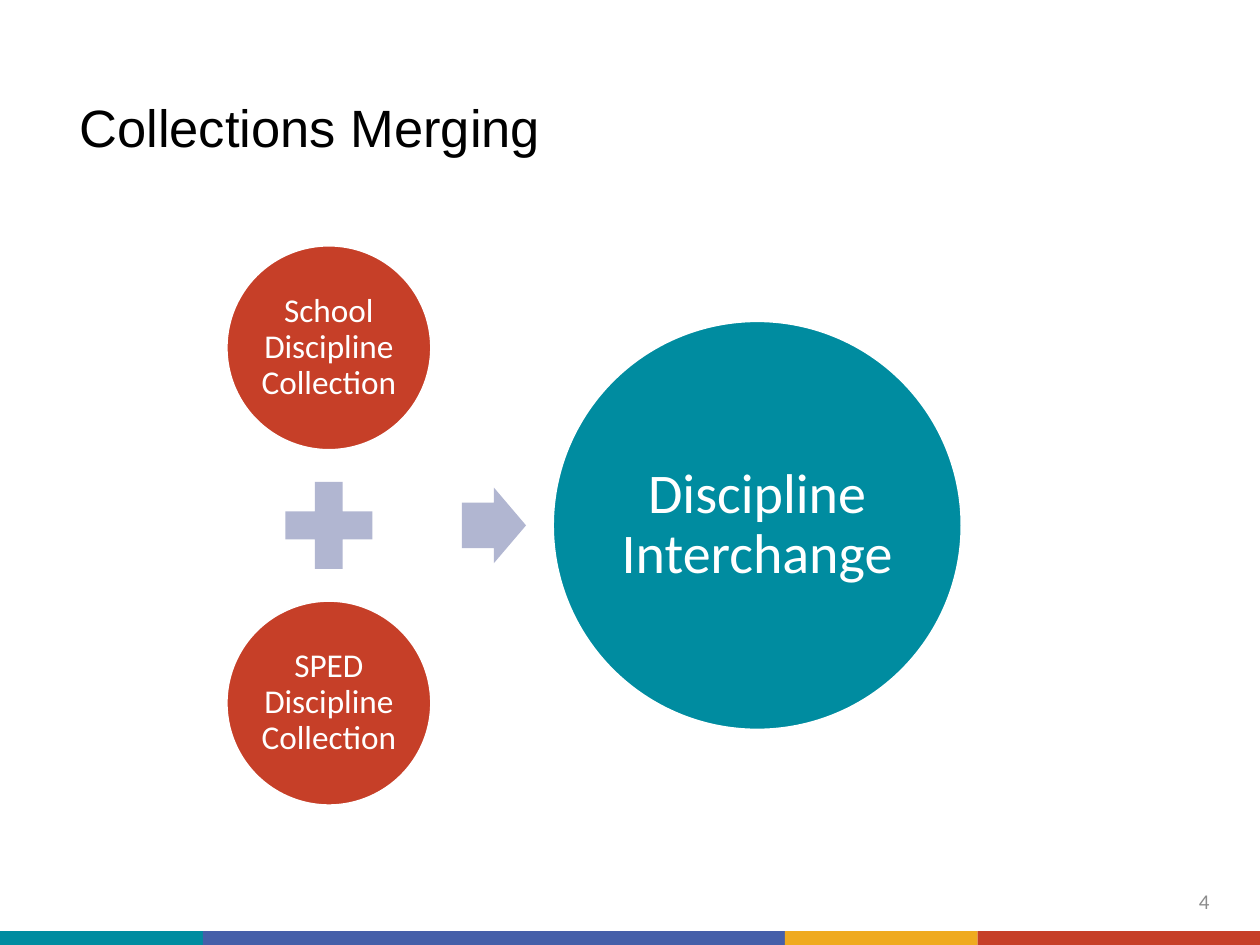
from pptx import Presentation
from pptx.dml.color import RGBColor
from pptx.enum.shapes import MSO_SHAPE
from pptx.enum.text import MSO_ANCHOR, PP_ALIGN
from pptx.util import Inches, Pt

WIDTH, HEIGHT = 10, 7.5
RED, TEAL, LAVENDER, WHITE = "C63F28", "008CA0", "B1B6D1", "FFFFFF"

TITLE = "Collections Merging"
SOURCES = ["School Discipline Collection", "SPED Discipline Collection"]
RESULT = "Discipline Interchange"
PAGE_NUMBER = "4"
FOOTER_BANDS = [(TEAL, 1.61), ("455FA9", 4.62), ("EFAA1F", 1.53), (RED, 2.24)]

BAND_HEIGHT = 0.11
MIDDLE = 4.17
SOURCE_CENTER, SOURCE_SIZE, SOURCE_OFFSET = 2.61, 1.62, 1.41
PLUS_SIZE = 0.94
ARROW_CENTER, ARROW_WIDTH, ARROW_HEIGHT = 3.92, 0.51, 0.6
RESULT_CENTER, RESULT_SIZE = 6.01, 2 * SOURCE_SIZE


def color(value):
    return RGBColor.from_string(value)


def write(shape, text, size, font, text_color, align, anchor, inset, spacing=0.9):
    frame = shape.text_frame
    frame.text = text
    frame.word_wrap = True
    frame.vertical_anchor = anchor
    frame.margin_left = frame.margin_right = Inches(inset)
    frame.margin_top = frame.margin_bottom = Inches(inset)
    paragraph = frame.paragraphs[0]
    paragraph.alignment = align
    paragraph.line_spacing = spacing
    run_font = paragraph.runs[0].font
    run_font.name, run_font.size = font, Pt(size)
    run_font.color.rgb = color(text_color)


def add_shape(slide, kind, left, top, width, height, fill):
    shape = slide.shapes.add_shape(kind, *map(Inches, (left, top, width, height)))
    shape.shadow.inherit = False
    shape.fill.solid()
    shape.fill.fore_color.rgb = color(fill)
    shape.line.fill.background()
    return shape


def add_centered(slide, kind, center_x, center_y, width, height, fill):
    return add_shape(slide, kind, center_x - width / 2, center_y - height / 2,
                     width, height, fill)


def add_circle(slide, center_x, center_y, diameter, fill, text, size, inset):
    circle = add_centered(slide, MSO_SHAPE.OVAL, center_x, center_y, diameter, diameter, fill)
    circle.line.color.rgb = color(WHITE)
    circle.line.width = Pt(1)
    write(circle, text, size, "Calibri", WHITE, PP_ALIGN.CENTER, MSO_ANCHOR.MIDDLE, inset)


def add_text(slide, left, top, width, height, *style, **options):
    box = slide.shapes.add_textbox(*map(Inches, (left, top, width, height)))
    write(box, *style, **options)


def main():
    presentation = Presentation()
    presentation.slide_width, presentation.slide_height = Inches(WIDTH), Inches(HEIGHT)
    slide = presentation.slides.add_slide(presentation.slide_layouts[6])

    left = 0
    for fill, width in FOOTER_BANDS:
        add_shape(slide, MSO_SHAPE.RECTANGLE, left, HEIGHT - BAND_HEIGHT, width, BAND_HEIGHT, fill)
        left += width

    add_text(slide, 0.56, 0.62, 7.24, 0.71, TITLE, 30, "Arial", "000000",
             PP_ALIGN.LEFT, MSO_ANCHOR.BOTTOM, 0.07)

    for text, side in zip(SOURCES, (-1, 1)):
        add_circle(slide, SOURCE_CENTER, MIDDLE + side * SOURCE_OFFSET, SOURCE_SIZE,
                   RED, text, 19, 0.03)
    add_centered(slide, MSO_SHAPE.MATH_PLUS, SOURCE_CENTER, MIDDLE, PLUS_SIZE, PLUS_SIZE, LAVENDER)
    arrow = add_centered(slide, MSO_SHAPE.RIGHT_ARROW, ARROW_CENTER, MIDDLE,
                         ARROW_WIDTH, ARROW_HEIGHT, LAVENDER)
    arrow.adjustments[0], arrow.adjustments[1] = 0.6, 0.5
    add_circle(slide, RESULT_CENTER, MIDDLE, RESULT_SIZE, TEAL, RESULT, 32, 0.04)

    add_text(slide, 9.42, 6.95, 0.25, 0.4, PAGE_NUMBER, 12, "Calibri", "8C8C8C",
             PP_ALIGN.RIGHT, MSO_ANCHOR.MIDDLE, 0.07, spacing=1.0)
    presentation.save("out.pptx")


if __name__ == "__main__":
    main()
